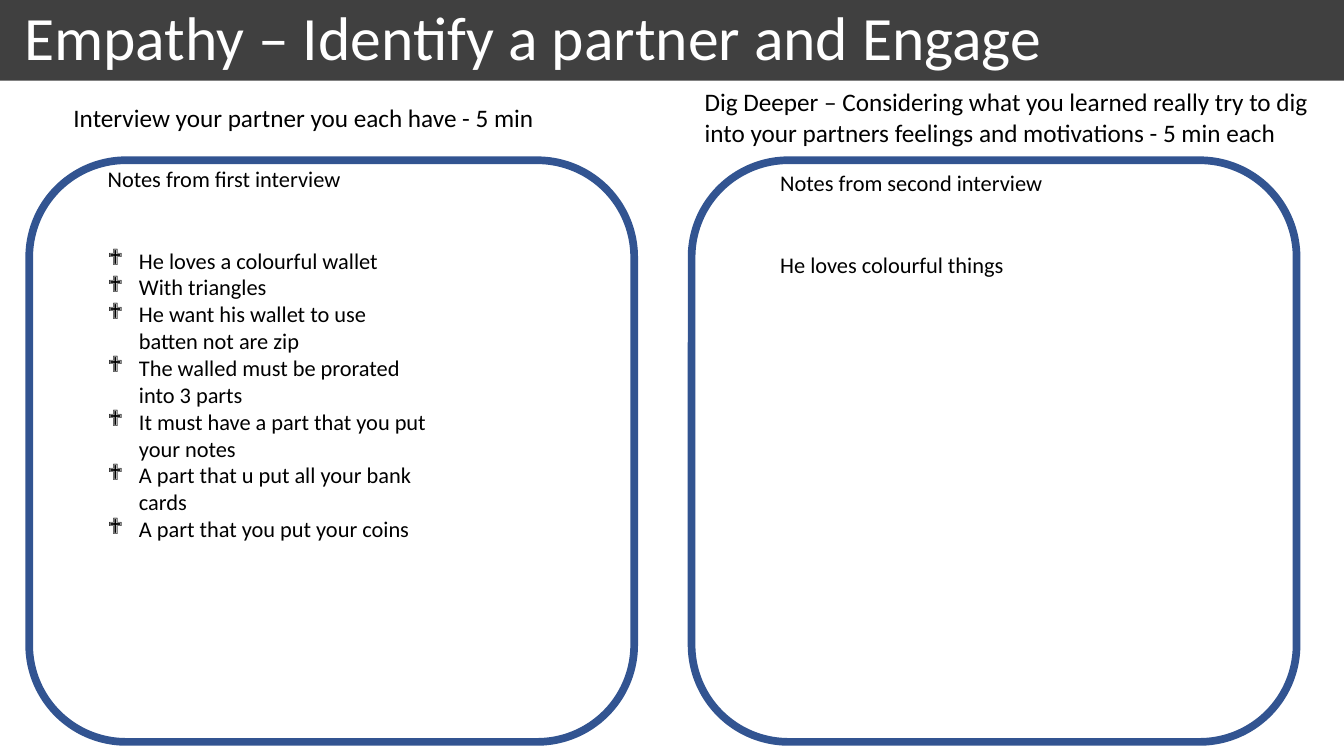
from lxml.etree import SubElement
from pptx import Presentation
from pptx.dml.color import RGBColor
from pptx.enum.shapes import MSO_SHAPE
from pptx.enum.text import MSO_ANCHOR, PP_ALIGN
from pptx.oxml.ns import qn
from pptx.util import Pt

PX = 9144
FONT = "Calibri"
BLACK, WHITE, DARK, BLUE = "000000", "FFFFFF", "404040", "325491"
BULLET_INDENT = 31
HEADING_GAP = 39

PANELS = [
    {
        "frame": (29, 159, 600, 577),
        "prompt": "Interview your partner you each have - 5 min",
        "prompt_box": (34, -62, 581, 40),
        "heading": "Notes from first interview",
        "notes_box": (68, 0, 338, 414),
        "bullet": "❖",
        "notes": [
            "He loves a colourful wallet",
            "With triangles",
            "He want his wallet to use batten not are zip",
            "The walled must be prorated into 3 parts",
            "It must have a part that you put your notes",
            "A part that u put all your bank cards",
            "A part that you put your coins",
        ],
    },
    {
        "frame": (686, 159, 600, 577),
        "prompt": "Dig Deeper – Considering what you learned really try to dig "
                  "into your partners feelings and motivations - 5 min each",
        "prompt_box": (3, -78, 628, 71),
        "heading": "Notes from second interview",
        "notes_box": (78, 4, 338, 306),
        "bullet": None,
        "notes": ["He loves colourful things"],
    },
]


def rgb(color):
    """Turn a hex string into a colour."""
    return RGBColor.from_string(color)


def emu(*lengths):
    """Turn px lengths into EMU."""
    return [length * PX for length in lengths]


def add_run(p, text, size, color):
    """Add a formatted run to a paragraph."""
    r = p.add_run()
    r.text = text
    for name, value in {"name": FONT, "size": Pt(size)}.items():
        setattr(r.font, name, value)
    r.font.color.rgb = rgb(color)


def add_bullet(p, char):
    """Give a paragraph a hanging bullet."""
    pPr = p._p.get_or_add_pPr()
    indent = BULLET_INDENT * PX
    for name, value in {"marL": indent, "indent": -indent}.items():
        pPr.set(name, str(value))
    SubElement(pPr, qn("a:buFont")).set("typeface", "Wingdings")
    SubElement(pPr, qn("a:buChar")).set("char", char)


def add_text(slide, box, lines, size, bullet=None):
    """Add a wrapping text box; lines after the first may be bulleted."""
    tf = slide.shapes.add_textbox(*emu(*box)).text_frame
    tf.word_wrap = True
    for i, line in enumerate(lines):
        p = tf.add_paragraph() if i else tf.paragraphs[0]
        add_run(p, line, size, BLACK)
        if i == 1:
            p.space_before = Pt(HEADING_GAP)
        if i and bullet:
            add_bullet(p, bullet)


def add_title(slide, box, text):
    """Add the dark title bar."""
    sp = slide.shapes.add_shape(MSO_SHAPE.RECTANGLE, *emu(*box))
    sp.shadow.inherit = False
    sp.fill.solid()
    sp.fill.fore_color.rgb = rgb(DARK)
    sp.line.fill.background()
    tf = sp.text_frame
    frame_format = {"word_wrap": True, "margin_left": 24 * PX,
                    "vertical_anchor": MSO_ANCHOR.MIDDLE}
    for name, value in frame_format.items():
        setattr(tf, name, value)
    p = tf.paragraphs[0]
    for name, value in {"alignment": PP_ALIGN.LEFT, "line_spacing": 0.9}.items():
        setattr(p, name, value)
    add_run(p, text, 44, WHITE)


def add_panel(slide, panel):
    """Add a rounded frame with its prompt above and its notes inside."""
    x, y, w, h = panel["frame"]
    sp = slide.shapes.add_shape(MSO_SHAPE.ROUNDED_RECTANGLE, *emu(x, y, w, h))
    sp.shadow.inherit = False
    sp.fill.background()
    sp.line.color.rgb = rgb(BLUE)
    sp.line.width = Pt(5.5)
    dx, dy, bw, bh = panel["prompt_box"]
    add_text(slide, (x + dx, y + dy, bw, bh), [panel["prompt"]], 18)
    dx, dy, bw, bh = panel["notes_box"]
    add_text(slide, (x + dx, y + dy, bw, bh),
             [panel["heading"], *panel["notes"]], 16, panel["bullet"])


def main():
    """Build and save the slide."""
    prs = Presentation()
    prs.slide_width, prs.slide_height = emu(1333, 750)
    slide = prs.slides.add_slide(prs.slide_layouts[6])
    add_title(slide, (0, 0, 1333, 80), "Empathy – Identify a partner and Engage")
    for panel in PANELS:
        add_panel(slide, panel)
    prs.save("out.pptx")


if __name__ == "__main__":
    main()
